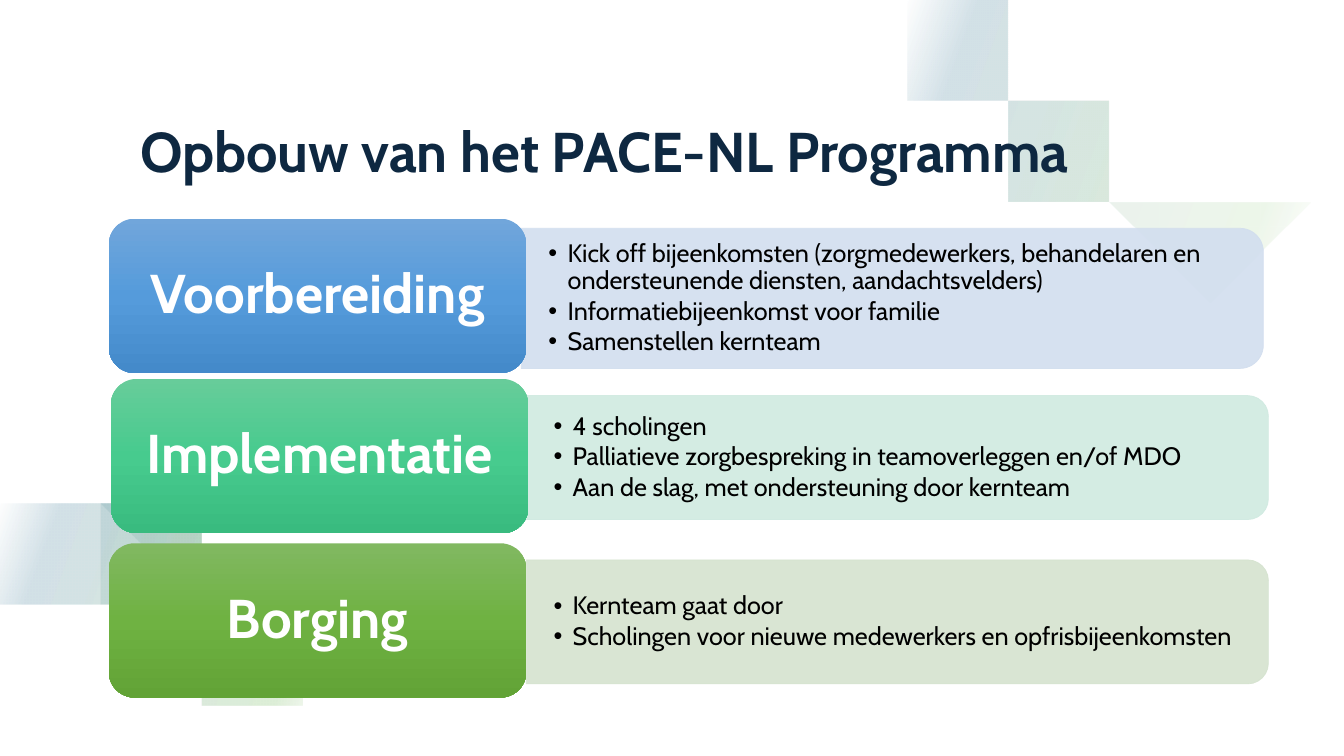
from dataclasses import dataclass

from lxml.etree import SubElement
from pptx import Presentation
from pptx.dml.color import RGBColor
from pptx.enum.shapes import MSO_SHAPE
from pptx.enum.text import MSO_ANCHOR, PP_ALIGN
from pptx.oxml import parse_xml
from pptx.oxml.ns import nsdecls, qn
from pptx.util import Inches, Pt


@dataclass(frozen=True)
class Theme:
    font: str = "Cabin"
    title_size: float = 40
    label_size: float = 39
    bullet_size: float = 18
    title_color: str = "0E2841"
    label_color: str = "FFFFFF"
    bullet_color: str = "000000"
    background: str = "FFFFFF"
    # (position in %, colour, opacity in %)
    ribbon: tuple = ((2, "FFFFFF", 10), (16, "4EA72E", 10),
                     (85, "156082", 10), (100, "FFFFFF", 10))
    ribbon_angle: int = 200


def smooth_curve(points, steps=8):
    """Catmull-Rom curve through the given points."""
    padded = [points[0], *points, points[-1]]
    curve = [points[0]]
    for a, b, c, d in zip(padded, padded[1:], padded[2:], padded[3:]):
        for step in range(1, steps + 1):
            t = step / steps
            curve.append(tuple(
                (2 * q + (r - p) * t + (2 * p - 5 * q + 4 * r - s) * t ** 2
                 + (3 * q - p - 3 * r + s) * t ** 3) / 2
                for p, q, r, s in zip(a, b, c, d)))
    return curve


def edge_between(outer, inner, start, end):
    """Edge at a share of the way from outer to inner, moving from start to end."""
    last = len(outer) - 1
    shares = [start + (end - start) * index / last for index in range(last + 1)]
    return smooth_curve([
        tuple(p + (q - p) * share for p, q in zip(out_point, in_point))
        for out_point, in_point, share in zip(outer, inner, shares)])


class SlideBuilder:
    def __init__(self, slide, theme):
        self.slide, self.theme = slide, theme
        fill = slide.background.fill
        fill.solid()
        fill.fore_color.rgb = RGBColor.from_string(theme.background)

    def gradient(self, shape, stops, angle):
        """Give the shape a linear gradient, no outline and no shadow."""
        shape.shadow.inherit = False
        shape.line.fill.background()
        stop_xml = "".join(
            f'<a:gs pos="{pos * 1000}"><a:srgbClr val="{color}">'
            f'<a:alpha val="{alpha * 1000}"/></a:srgbClr></a:gs>'
            for pos, color, alpha in stops)
        shape._element.spPr.find(qn("a:ln")).addprevious(parse_xml(
            f'<a:gradFill {nsdecls("a")} rotWithShape="1"><a:gsLst>{stop_xml}'
            f'</a:gsLst><a:lin ang="{angle * 60000}" scaled="0"/></a:gradFill>'))

    def ribbon(self, outer, inner, bands):
        for outer_shares, inner_shares in bands:
            outline = (edge_between(outer, inner, *outer_shares)
                       + edge_between(outer, inner, *inner_shares)[::-1])
            builder = self.slide.shapes.build_freeform(*outline[0], scale=Inches(1))
            builder.add_line_segments(outline[1:], close=True)
            self.gradient(builder.convert_to_shape(), self.theme.ribbon,
                          self.theme.ribbon_angle)

    def run(self, paragraph, text, size, color, bold=False):
        paragraph.line_spacing = 0.9
        run = paragraph.add_run()
        run.text = text
        font = run.font
        font.name, font.size, font.bold = self.theme.font, Pt(size), bold
        font.color.rgb = RGBColor.from_string(color)

    def text_box(self, box, anchor, margins):
        frame = self.slide.shapes.add_textbox(*map(Inches, box)).text_frame
        frame.word_wrap = True
        frame.vertical_anchor = anchor
        frame.margin_left = frame.margin_right = Inches(margins[0])
        frame.margin_top = frame.margin_bottom = Inches(margins[1])
        return frame

    def title(self, text, box):
        frame = self.text_box(box, MSO_ANCHOR.BOTTOM, (0.1, 0.05))
        self.run(frame.paragraphs[0], text, self.theme.title_size,
                 self.theme.title_color, bold=True)

    def panel(self, left, middle, width, height, color):
        """Panel with rounded right corners, as a quarter-turned shape."""
        panel = self.slide.shapes.add_shape(
            MSO_SHAPE.ROUND_2_SAME_RECTANGLE,
            Inches(left + (width - height) / 2), Inches(middle - width / 2),
            Inches(height), Inches(width))
        panel.rotation = 90
        panel.shadow.inherit = False
        panel.line.width = Pt(0.5)
        for fill in (panel.fill, panel.line.fill):
            fill.solid()
            fill.fore_color.rgb = RGBColor.from_string(color)
        for rgb in panel._element.spPr.iter(qn("a:srgbClr")):
            SubElement(rgb, qn("a:alpha"), val="90000")

    def bullets(self, items, box):
        frame = self.text_box(box, MSO_ANCHOR.MIDDLE, (0.27, 0.14))
        for index, item in enumerate(items):
            paragraph = frame.add_paragraph() if index else frame.paragraphs[0]
            properties = paragraph._p.get_or_add_pPr()
            properties.set("marL", str(Inches(0.19)))
            properties.set("indent", str(-Inches(0.19)))
            SubElement(properties, qn("a:buFont"), typeface="Arial")
            SubElement(properties, qn("a:buChar"), char="•")
            paragraph.space_after = Pt(2.2)
            self.run(paragraph, item, self.theme.bullet_size,
                     self.theme.bullet_color)

    def phase_label(self, text, box, colors):
        label = self.slide.shapes.add_shape(MSO_SHAPE.ROUNDED_RECTANGLE,
                                            *map(Inches, box))
        stops = [(pos, color, 100) for pos, color in zip((0, 50, 100), colors)]
        self.gradient(label, stops, 90)
        frame = label.text_frame
        frame.word_wrap = True
        frame.vertical_anchor = MSO_ANCHOR.MIDDLE
        paragraph = frame.paragraphs[0]
        paragraph.alignment = PP_ALIGN.CENTER
        self.run(paragraph, text, self.theme.label_size,
                 self.theme.label_color, bold=True)


# Ribbons: outer edge, inner edge, and bands as shares of the way between them
FULL_BANDS = [((0, 0), (0.83, 0.83)), ((0, 0), (1, 1))]
TOP_RIBBON = (
    [(9.11, 0), (9.33, 0.68), (9.73, 1.22), (10.6, 2.04), (11.81, 2.35),
     (12.57, 2.19), (13.33, 1.71)],
    [(9.7, 0), (9.8, 0.34), (10.21, 0.9), (10.9, 1.57), (11.81, 1.79),
     (12.39, 1.65), (13.33, 1.01)],
    [((-0.07, -0.55), (0, 0.08)), ((0, -0.12), (0.27, 0.55)), *FULL_BANDS])
BOTTOM_RIBBON = (
    [(0, 5.36), (0.49, 5.31), (1.41, 5.46), (2.22, 5.89), (2.84, 6.53), (3.16, 7.5)],
    [(0, 5.85), (0.49, 5.78), (1.28, 5.93), (1.99, 6.33), (2.48, 6.9), (2.65, 7.5)],
    [*FULL_BANDS, ((-0.04, 0), (0.39, 0.27)), ((-0.4, -0.02), (0, 0.04))])

# Label, label left and top, gradient, panel left, middle and height, tint, bullets
PHASES = [
    ("Voorbereiding", (1.08, 2.17), ("71A6DB", "559BDB", "448ACA"),
     (5.17, 2.96, 1.39), "D2DEEF",
     ["Kick off bijeenkomsten (zorgmedewerkers, behandelaren en "
      "ondersteunende diensten, aandachtsvelders)",
      "Informatiebijeenkomst voor familie", "Samenstellen kernteam"]),
    ("Implementatie", (1.1, 3.76), ("67CC9A", "47CB8E", "39BB7F"),
     (5.22, 4.54, 1.23), "D0EAE1",
     ["4 scholingen", "Palliatieve zorgbespreking in teamoverleggen en/of MDO",
      "Aan de slag, met ondersteuning door kernteam"]),
    ("Borging", (1.08, 5.39), ("81B861", "6FB242", "62A336"),
     (5.22, 6.17, 1.23), "D5E3CF",
     ["Kernteam gaat door",
      "Scholingen voor nieuwe medewerkers en opfrisbijeenkomsten"]),
]


def main():
    deck = Presentation()
    deck.slide_width, deck.slide_height = Inches(13.33), Inches(7.5)
    page = SlideBuilder(deck.slides.add_slide(deck.slide_layouts[6]), Theme())

    # Background ribbons
    for outer, inner, bands in (TOP_RIBBON, BOTTOM_RIBBON):
        page.ribbon(outer, inner, bands)

    # Title
    page.title("Opbouw van het PACE-NL Programma", (1.29, 0.43, 10.75, 1.45))

    # Programme phases
    for name, corner, gradient, (left, middle, height), tint, items in PHASES:
        page.panel(left, middle, 7.36, height, tint)
        page.bullets(items, (left, middle - height / 2 + 0.06, 7.3, height - 0.12))
        page.phase_label(name, (*corner, 4.14, 1.53), gradient)

    deck.save("out.pptx")


if __name__ == "__main__":
    main()
